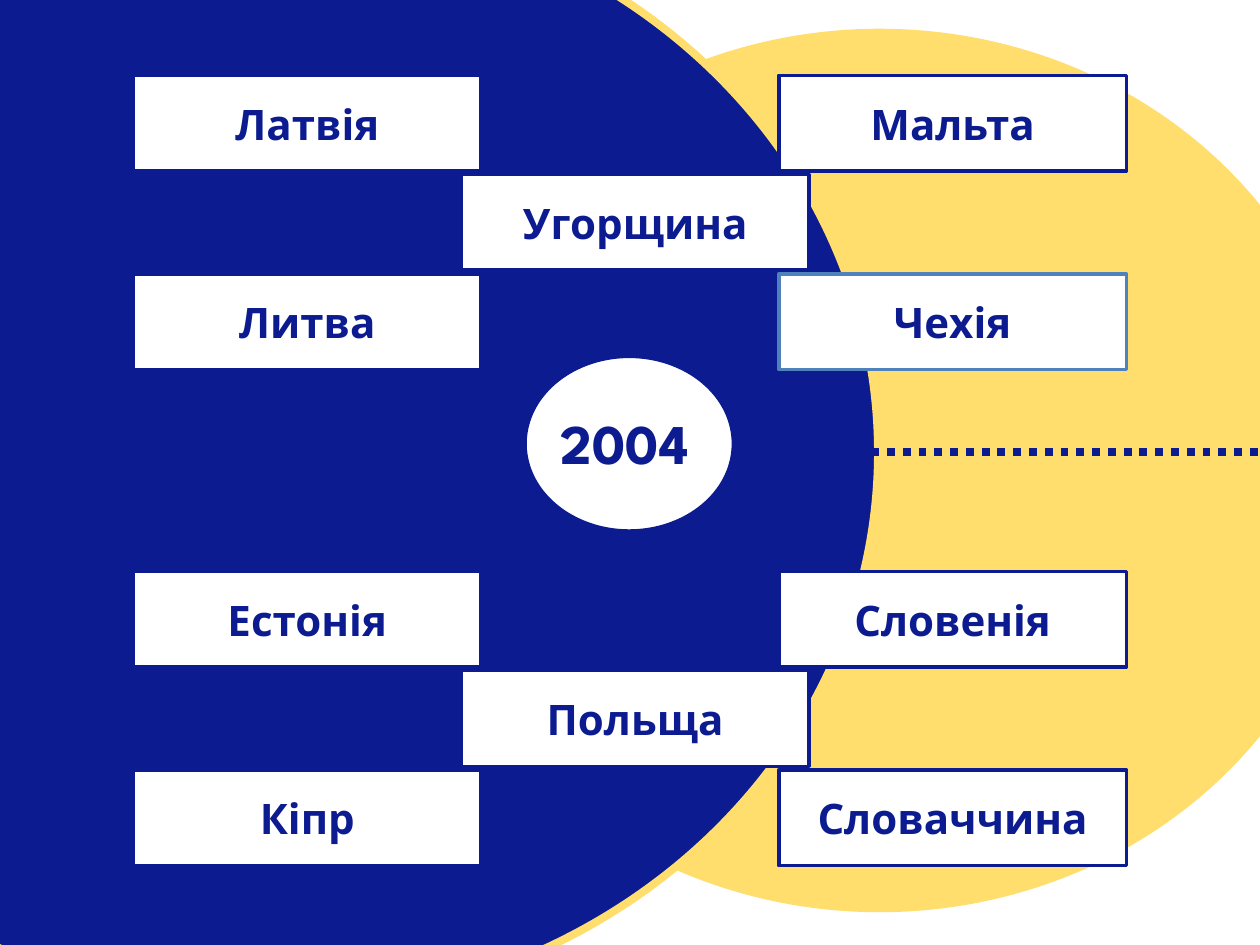
from pptx import Presentation
from pptx.dml.color import RGBColor
from pptx.enum.dml import MSO_LINE
from pptx.enum.shapes import MSO_CONNECTOR, MSO_SHAPE
from pptx.enum.text import MSO_ANCHOR, PP_ALIGN
from pptx.oxml.ns import qn
from pptx.util import Cm, Pt

OVAL, RECTANGLE = MSO_SHAPE.OVAL, MSO_SHAPE.RECTANGLE
STRAIGHT = MSO_CONNECTOR.STRAIGHT
DOTTED = MSO_LINE.ROUND_DOT
MIDDLE, CENTER = MSO_ANCHOR.MIDDLE, PP_ALIGN.CENTER

COLORS = {"navy": "0C1C90", "yellow": "FFDE6E", "white": "FFFFFF", "blue": "4F81BD"}
FONT = "League Spartan"

COLUMN_LEFTS = {"left": 2.69, "middle": 9.3, "right": 15.7}
FIRST_ROW, ROW_STEP = 1.52, 2
BOX_WIDTH, BOX_HEIGHT = 7.01, 1.93
COUNTRIES = [
    ("Литва", "left", 2, "navy"),
    ("Кіпр", "left", 7, "navy"),
    ("Естонія", "left", 5, "navy"),
    ("Словенія", "right", 5, "navy"),
    ("Словаччина", "right", 7, "navy"),
    ("Польща", "middle", 6, "navy"),
    ("Угорщина", "middle", 1, "navy"),
    ("Мальта", "right", 0, "navy"),
    ("Латвія", "left", 0, "navy"),
    ("Чехія", "right", 2, "blue"),
]


class SlidePainter:
    def __init__(self, page):
        self.page = page

    def color(self, name):
        return RGBColor.from_string(COLORS[name])

    def shape(self, kind, left, top, width, height, fill, line=None, weight=4.5):
        shape = self.page.shapes.add_shape(
            kind, Cm(left), Cm(top), Cm(width), Cm(height))
        shape.shadow.inherit = False
        shape.fill.solid()
        shape.fill.fore_color.rgb = self.color(fill)
        if line:
            shape.line.color.rgb = self.color(line)
            shape.line.width = Pt(weight)
        else:
            shape.line.fill.background()
        return shape

    def set_text(self, box, text, size):
        frame = box.text_frame
        frame.word_wrap = True
        frame.vertical_anchor = MIDDLE
        para = frame.paragraphs[0]
        para.text = text
        para.alignment = CENTER
        para.font.name = FONT
        para.font.size = Pt(size)
        para.font.bold = True
        para.font.color.rgb = self.color("navy")

    def country(self, name, column, row, line):
        box = self.shape(RECTANGLE, COLUMN_LEFTS[column], FIRST_ROW + row * ROW_STEP,
                         BOX_WIDTH, BOX_HEIGHT, "white", line, 2)
        self.set_text(box, name, 24)

    def dotted_line(self, left, right, top):
        line = self.page.shapes.add_connector(
            STRAIGHT, Cm(left), Cm(top), Cm(right), Cm(top))
        line.line.color.rgb = self.color("navy")
        line.line.width = Pt(4.5)
        line.line.dash_style = DOTTED
        properties = line._element.spPr
        properties.append(properties.makeelement(qn("a:effectLst"), {}))

    def label(self, text, left, top, width, height, size):
        box = self.page.shapes.add_textbox(Cm(left), Cm(top), Cm(width), Cm(height))
        self.set_text(box, text, size)


def main():
    deck = Presentation()
    deck.slide_width, deck.slide_height = Cm(25.4), Cm(19.05)
    painter = SlidePainter(deck.slides.add_slide(deck.slide_layouts[6]))

    painter.shape(OVAL, 8.13, 0.58, 19.2, 17.81, "yellow")
    painter.shape(OVAL, -6.71, -2.08, 24.41, 22.4, "navy", "yellow")
    for country in COUNTRIES:
        painter.country(*country)
    painter.dotted_line(0.71, 25.4, 9.12)
    painter.shape(OVAL, 10.54, 7.14, 4.29, 3.61, "white", "navy")
    painter.label("2004", 10.69, 7.32, 3.81, 3.18, 32)

    deck.save("out.pptx")


if __name__ == "__main__":
    main()
